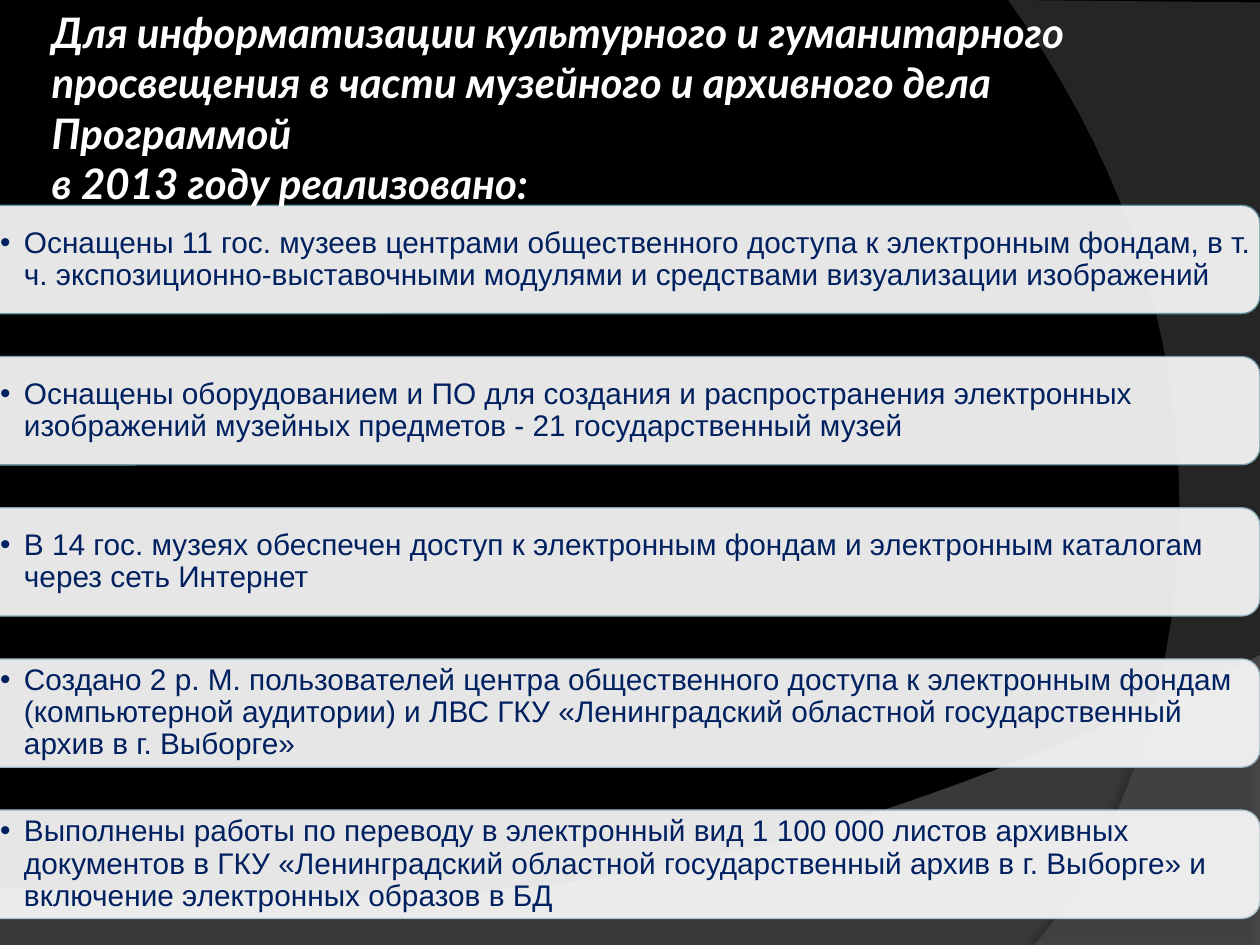
"""Build the slide on museum and archive results of 2013."""
from dataclasses import dataclass
from lxml.etree import SubElement
from pptx import Presentation
from pptx.dml.color import RGBColor
from pptx.enum.shapes import MSO_SHAPE
from pptx.enum.text import MSO_ANCHOR, MSO_AUTO_SIZE, PP_ALIGN
from pptx.oxml.ns import qn
from pptx.util import Inches, Pt

TITLE = [
    "Для информатизации культурного и гуманитарного просвещения в части музейного и архивного дела Программой",
    "в 2013 году реализовано:",
]
ITEMS = [
    ("6491A0", "Оснащены 11 гос. музеев центрами общественного доступа к электронным фондам, в т. ч. экспозиционно-выставочными модулями и средствами визуализации изображений"),
    ("769EAB", "Оснащены оборудованием и ПО для создания и распространения электронных изображений музейных предметов - 21 государственный музей"),
    ("88AAB6", "В 14 гос. музеях обеспечен доступ к электронным фондам и электронным каталогам через сеть Интернет"),
    ("9AB7C1", "Создано 2 р. М. пользователей центра общественного доступа к электронным фондам (компьютерной аудитории) и ЛВС ГКУ «Ленинградский областной государственный архив в г. Выборге»"),
    ("ACC4CD", "Выполнены работы по переводу в электронный вид 1 100 000 листов архивных документов в ГКУ «Ленинградский областной государственный архив в г. Выборге» и включение электронных образов в БД"),
]
WIDE, HIGH = 10, 7.5
LEFT, TOP, PITCH = -0.13, 1.63, 1.2
BAR_W, BAR_H = 10.13, 0.86
WAVES = [
    {"curve": [(10, 5.2), (5.59, 7.29), (3.91, 7.19), (0, 7.05)],
     "ends": [(0, HIGH), (WIDE, HIGH)],
     "fill": ("7F7F7F", 45), "shade": (35, 3.5, 270)},
    {"curve": [(8.21, 7.5), (9.35, 6.19), (10.18, 3), (8, 0)],
     "ends": [(WIDE, 0.02), (WIDE, HIGH)],
     "fill": ("5E5E5E", 40), "shade": (45, 4, 180)},
]


@dataclass(frozen=True)
class Theme:
    back: str = "000000"
    head: str = "FFFFFF"
    bar: str = "FFFFFF"
    text: str = "002060"
    head_font: str = "Lato"
    text_font: str = "Arial"
    head_size: int = 24
    text_size: int = 17


THEME = Theme()


def color(code):
    return RGBColor.from_string(code)


def paint(shape, code, share):
    shape.shadow.inherit = False
    shape.fill.solid()
    shape.fill.fore_color.rgb = color(code)
    tint = shape.element.spPr.find(qn("a:solidFill"))[0]
    SubElement(tint, qn("a:alpha"), val=str(share * 1000))


def shade(shape, share, dist, angle):
    effect = shape.element.spPr.find(qn("a:effectLst"))
    outer = SubElement(effect, qn("a:outerShdw"), blurRad=str(Pt(4)),
                       dist=str(Pt(dist)), dir=str(angle * 60000),
                       algn="ctr", rotWithShape="0")
    tint = SubElement(outer, qn("a:srgbClr"), val=THEME.back)
    SubElement(tint, qn("a:alpha"), val=str(share * 1000))


def bezier(points, steps=40):
    for step in range(steps + 1):
        t = step / steps
        parts = ((1 - t) ** 3, 3 * t * (1 - t) ** 2, 3 * t * t * (1 - t), t ** 3)
        yield tuple(sum(w * p[axis] for w, p in zip(parts, points))
                    for axis in (0, 1))


def add_wave(slide, wave):
    points = [(Inches(x), Inches(y))
              for x, y in [*bezier(wave["curve"]), *wave["ends"]]]
    pen = slide.shapes.build_freeform(*points[0])
    pen.add_line_segments(points[1:], close=True)
    shape = pen.convert_to_shape()
    paint(shape, *wave["fill"])
    shape.line.fill.background()
    shade(shape, *wave["shade"])


def add_bar(slide, row, edge, text):
    mid_x, mid_y = LEFT + BAR_W / 2, TOP + row * PITCH + BAR_H / 2
    bar = slide.shapes.add_shape(
        MSO_SHAPE.ROUND_2_SAME_RECTANGLE,
        Inches(mid_x - BAR_H / 2), Inches(mid_y - BAR_W / 2),
        Inches(BAR_H), Inches(BAR_W))
    bar.rotation = 90
    paint(bar, THEME.bar, 90)
    bar.line.color.rgb = color(edge)
    bar.line.width = Pt(0.75)

    box = slide.shapes.add_textbox(
        Inches(LEFT), Inches(mid_y - 0.39), Inches(10.09), Inches(0.78))
    frame = box.text_frame
    frame.word_wrap = True
    frame.vertical_anchor = MSO_ANCHOR.MIDDLE
    frame.margin_left = Inches(0.13)
    frame.margin_right = frame.margin_top = frame.margin_bottom = Inches(0.01)
    frame.text = text
    para = frame.paragraphs[0]
    para.line_spacing = 0.9
    props = para._p.get_or_add_pPr()
    props.set("marL", str(Inches(0.19)))
    props.set("indent", str(-Inches(0.19)))
    SubElement(props, qn("a:buFont"), typeface=THEME.text_font)
    SubElement(props, qn("a:buChar"), char="•")
    style(para, THEME.text_font, THEME.text_size, THEME.text)


def style(para, name, size, code, strong=False):
    for run in para.runs:
        font = run.font
        font.name, font.size = name, Pt(size)
        font.bold = font.italic = strong
        font.color.rgb = color(code)


def add_title(slide):
    title = slide.shapes.title
    title.left, title.top = Inches(0.31), Inches(0)
    title.width, title.height = Inches(9.53), Inches(1.31)
    frame = title.text_frame
    frame.word_wrap = True
    frame.auto_size = MSO_AUTO_SIZE.NONE
    frame.vertical_anchor = MSO_ANCHOR.TOP
    frame.text = "\n".join(TITLE)
    for para in frame.paragraphs:
        para.alignment = PP_ALIGN.LEFT
        style(para, THEME.head_font, THEME.head_size, THEME.head, True)
    title.element.getparent().append(title.element)


def main():
    deck = Presentation()
    deck.slide_width, deck.slide_height = Inches(WIDE), Inches(HIGH)
    slide = deck.slides.add_slide(deck.slide_layouts[5])
    slide.background.fill.solid()
    slide.background.fill.fore_color.rgb = color(THEME.back)
    for wave in WAVES:
        add_wave(slide, wave)
    for row, (edge, text) in enumerate(ITEMS):
        add_bar(slide, row, edge, text)
    add_title(slide)
    deck.save("out.pptx")


if __name__ == "__main__":
    main()
